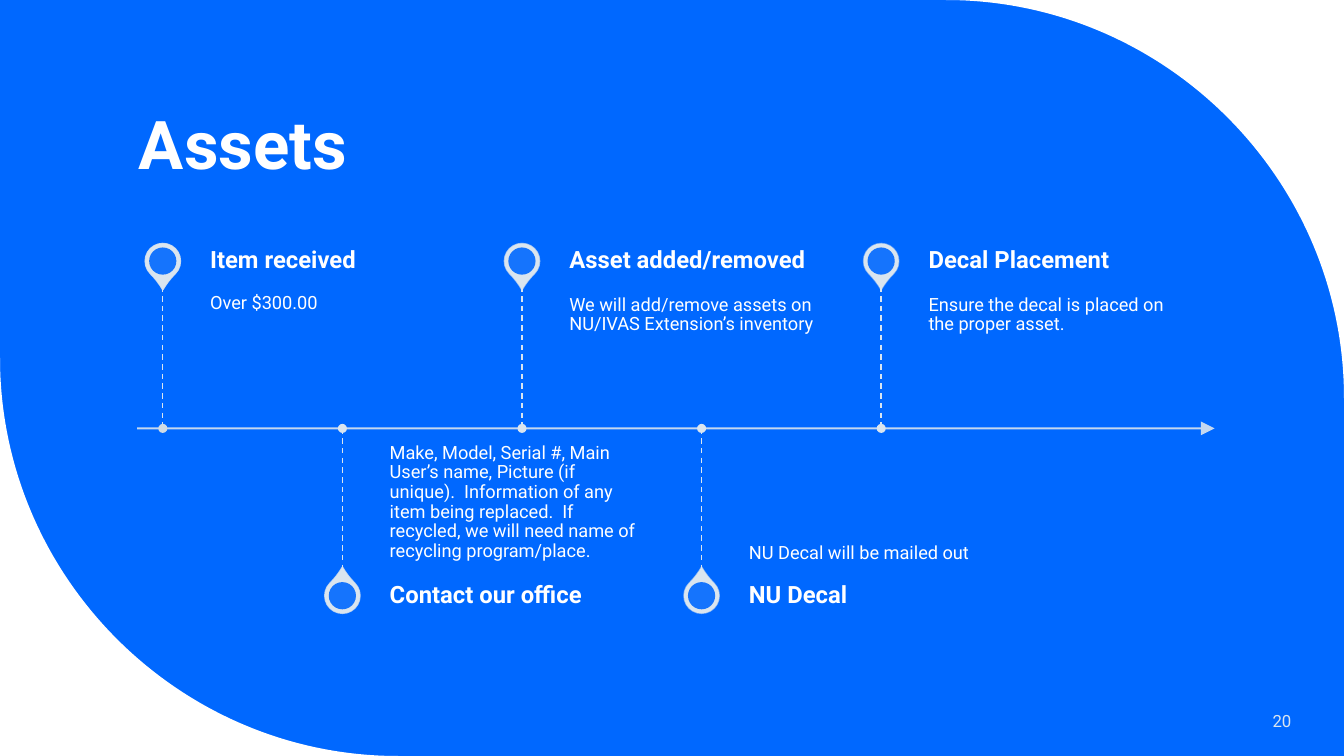
"""Build the Assets timeline slide."""
from dataclasses import dataclass

from lxml import etree
from pptx import Presentation, util as u
from pptx.dml.color import RGBColor
from pptx.enum import dml, shapes, text
from pptx.oxml.ns import qn

COLS, ROWS = 133.33, 75
ARC = 0.55


@dataclass(frozen=True)
class Theme:
    """Colours, font and type sizes of the slide."""
    blue: str = "0068FF"
    white: str = "FFFFFF"
    pale: str = "DAE5EF"
    first_dot: str = "D0DBE4"
    font: str = "Roboto"
    title: int = 48
    heading: int = 17
    body: int = 13
    number: int = 12


T = Theme()
STEPS = [
    ("Item received", "Over $300.00"),
    ("Contact our office",
     "Make, Model, Serial #, Main User’s name, Picture (if unique).  Information of any "
     "item being replaced.  If recycled, we will need name of recycling program/place."),
    ("Asset added/removed", "We will add/remove assets on NU/IVAS Extension’s inventory"),
    ("NU Decal", "NU Decal will be mailed out"),
    ("Decal Placement", "Ensure the decal is placed on the proper asset."),
]


def g(n):
    """Convert grid units, ten to the inch, to a length."""
    return u.Inches(n / 10)


def apply(obj, **values):
    """Set each given attribute on an object."""
    for name, value in values.items():
        setattr(obj, name, value)


def paint(fill, colour, alpha=100):
    """Fill with a solid colour at an opacity in percent."""
    fill.solid()
    fill.fore_color.rgb = RGBColor.from_string(colour)
    if alpha < 100:
        for clr in fill._xPr.iter(qn("a:srgbClr")):
            etree.SubElement(clr, qn("a:alpha"), val=str(alpha * 1000))


def add_text(s, box, words, size, colour=T.white, bold=False, anchor="MIDDLE",
             align="LEFT", insets=(1, 0.5, 1, 0.5), spacing=0.9, after=0):
    """Write one paragraph in a box; insets run left, top, right, bottom."""
    tf = s.shapes.add_textbox(*map(g, box)).text_frame
    left, top, right, bottom = map(g, insets)
    apply(tf, word_wrap=True, vertical_anchor=text.MSO_ANCHOR[anchor], margin_left=left,
          margin_top=top, margin_right=right, margin_bottom=bottom)
    p = tf.paragraphs[0]
    apply(p, alignment=text.PP_ALIGN[align], line_spacing=spacing)
    if after:
        gap = etree.SubElement(p._p.get_or_add_pPr(), qn("a:spcAft"))
        etree.SubElement(gap, qn("a:spcPct"), val=str(after * 1000))
    r = p.add_run()
    r.text = words
    apply(r.font, name=T.font, size=u.Pt(size), bold=bold)
    r.font.color.rgb = RGBColor.from_string(colour)


def add_line(s, x1, y1, x2, y2, width, alpha=100, dash=None, arrow=False):
    """Draw a pale straight line, dashed or with an arrowhead if asked."""
    c = s.shapes.add_connector(shapes.MSO_CONNECTOR.STRAIGHT, *map(g, (x1, y1, x2, y2)))
    paint(c.line.fill, T.pale, alpha)
    apply(c.line, width=u.Pt(width), dash_style=dash)
    if arrow:
        etree.SubElement(c.line._get_or_add_ln(), qn("a:tailEnd"),
                         type="triangle", w="lg", len="lg")
    etree.SubElement(c._element.spPr, qn("a:effectLst"))


def finish(sp, colour, alpha=100):
    """Give a shape a plain fill without shadow or outline."""
    sp.shadow.inherit = False
    paint(sp.fill, colour, alpha)
    sp.line.fill.background()


def add_round(s, kind, x, y, size, colour, alpha=100):
    """Place a filled shape of one size centred on a point."""
    sp = s.shapes.add_shape(shapes.MSO_SHAPE[kind], g(x - size / 2), g(y - size / 2),
                            g(size), g(size))
    finish(sp, colour, alpha)
    return sp


def add_corner(s, box, right):
    """Cut a white rounded corner at the top right or bottom left of the slide."""
    x, y, w, h = map(g, box)
    tip, start, end = (((w, 0), (0, 0), (w, h)) if right
                       else ((0, h), (w, h), (0, 0)))
    fb = s.shapes.build_freeform(x + tip[0], y + tip[1])
    fb.add_line_segments([(x + px, y + py) for px, py in (start, end)], close=True)
    sp = fb.convert_to_shape()
    straight = sp._element.findall(".//" + qn("a:lnTo"))[1]
    curve = etree.Element(qn("a:cubicBezTo"))
    pulls = [[round(a + ARC * (b - a)) for a, b in zip(pt, tip)] for pt in (start, end)]
    for px, py in (*pulls, end):
        etree.SubElement(curve, qn("a:pt"), x=str(px), y=str(py))
    straight.getparent().replace(straight, curve)
    finish(sp, T.white)


def add_step(s, box, heading, body, above, alpha, dot):
    """Draw one timeline step whose box touches the axis below or above it."""
    x, y, w, h = box
    head = 5
    axis, head_y = (y + h, y) if above else (y, y + h - head)
    pin_y, stem_end = head_y + head / 2, head_y + (head if above else 0)
    pin = add_round(s, "TEAR", x, pin_y, 3.5, T.pale)
    pin.adjustments[0] = 1.15
    pin.rotation = 135 if above else 315
    paint(pin.line.fill, T.pale, alpha)
    pin.line.width = u.Pt(1)
    add_round(s, "OVAL", x, pin_y, 2.7, T.blue, 90)
    left, body_y = x + 4.7, y + head if above else y
    add_text(s, (left, body_y, w, h - head), body, T.body, anchor="TOP" if above else "BOTTOM",
             insets=(0, 0.9, 0.9, 1.4) if above else (0, 1.4, 0, 0.9), after=35)
    add_text(s, (left, head_y, w, head), heading, T.heading, bold=True,
             insets=(0, 0, 1.2, 0), after=35)
    add_line(s, x, min(stem_end, axis), x, max(stem_end, axis), 1, dash=dml.MSO_LINE.DASH)
    add_round(s, "OVAL", x, axis, 0.9, dot)


def add_timeline(s, box):
    """Draw the axis through the middle of a box and alternate steps around it."""
    x, y, w, h = box
    half, pitch = h / 2, w / 6
    add_line(s, x, y + half, x + w, y + half, 1.5, 90, arrow=True)
    for i, (heading, body) in enumerate(STEPS):
        above = i % 2 == 0
        step = (x + 2.55 + i * pitch, y if above else y + half, 25.3, half)
        add_step(s, step, heading, body, above, 90 - 10 * i, T.pale if i else T.first_dot)


def main():
    """Assemble and save the slide."""
    prs = Presentation()
    apply(prs, slide_width=g(COLS), slide_height=g(ROWS))
    s = prs.slides.add_slide(prs.slide_layouts[6])
    paint(s.background.fill, T.blue)
    corner = 39.5
    add_corner(s, (COLS - corner, 0, corner, corner), True)
    add_corner(s, (0, ROWS - corner, corner, corner), False)
    add_text(s, (12.8, 4.2, 106.9, 14.5), "Assets", T.title, bold=True, anchor="BOTTOM")
    add_timeline(s, (13.6, 23.4, 106.9, 38.2))
    add_text(s, (111, 69.5, 18.1, 4), "20", T.number, T.pale, align="RIGHT", spacing=1.0)
    prs.save("out.pptx")


if __name__ == "__main__":
    main()
